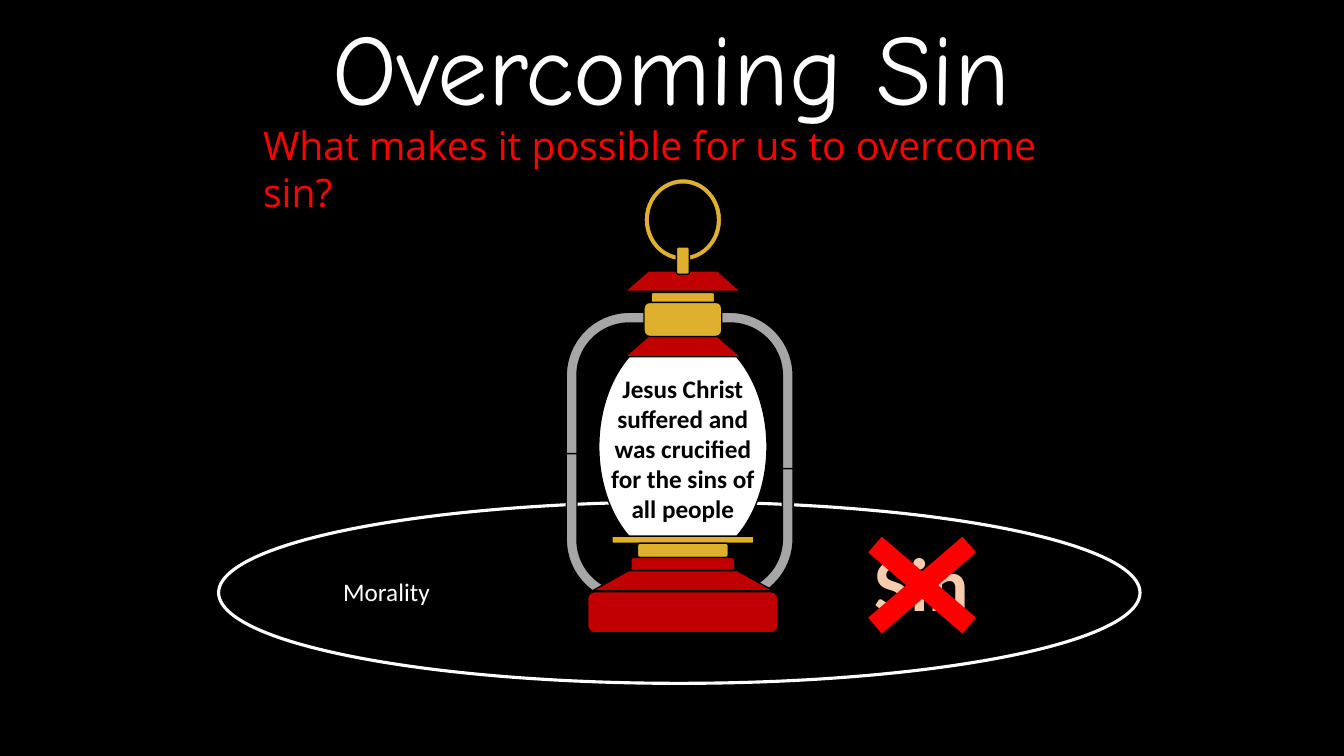
from dataclasses import dataclass

from lxml import etree
from pptx import Presentation
from pptx.dml.color import RGBColor
from pptx.enum.shapes import MSO_SHAPE
from pptx.enum.text import MSO_ANCHOR, MSO_AUTO_SIZE, PP_ALIGN
from pptx.oxml.ns import qn
from pptx.util import Cm, Pt

ARM, ELLIPSE, RING = MSO_SHAPE.BENT_ARROW, MSO_SHAPE.OVAL, MSO_SHAPE.DONUT
ROUNDED, TRAPEZOID = MSO_SHAPE.ROUNDED_RECTANGLE, MSO_SHAPE.FLOWCHART_MANUAL_OPERATION
CROSS = MSO_SHAPE.MATH_MULTIPLY
LEFT, CENTER = PP_ALIGN.LEFT, PP_ALIGN.CENTER


@dataclass(frozen=True)
class Theme:
    black: str = "000000"
    white: str = "FFFFFF"
    red: str = "FF0000"
    dark_red: str = "C00000"
    gold: str = "DEB02E"
    steel: str = "A6A6A6"
    peach: str = "F8CBAD"
    orange: str = "ED7D31"
    title_font: str = "Comic Neue"
    question_font: str = "Open Sans"
    body_font: str = "Calibri"
    title_size: int = 72
    sin_size: int = 54
    question_size: int = 28
    body_size: int = 18


THEME = Theme()

# Content; boxes are left, top, width, height in centimetres
TITLE = "Overcoming Sin"
QUESTION = "What makes it possible for us to overcome sin?"
MORALITY = "Morality"
SIN = "Sin"
GLOBE_TEXT = "Jesus Christ suffered and was crucified for the sins of all people"

TITLE_BOX = (5.28, 0, 23.29, 3.33)
QUESTION_BOX = (6.38, 2.92, 21.51, 1.45)
MORALITY_BOX = (8.1, 14.4, 3.28, 1.02)
SIN_BOX = (21.77, 13.39, 2.92, 2.57)
GROUND_BOX = (5.51, 12.65, 23.22, 4.57)
CROSS_BOX = (20.98, 12.8, 4.52, 3.89)

LANTERN_AXIS = 17.21
GLOBE_TEXT_WIDTH, GLOBE_TEXT_TOP, GLOBE_TEXT_HEIGHT = 4.14, 9.27, 4.11

# Lantern arms: left, top, height, flips
ARM_WIDTH = 2.77
ARM_ADJUSTMENTS = (0.098, 0.139, 0.119, 0.576)
ARMS = [
    (17.22, 11.23, 4.19, ("flipH", "flipV")),
    (17.22, 7.62, 4.19, ("flipH",)),
    (14.27, 10.92, 4.52, ("flipV",)),
    (14.27, 7.62, 3.81, ()),
]

# Lantern body, centred on its axis: kind, width, top, height, colour, rotation
BODY = [
    (ELLIPSE, 4.24, 8.31, 5.89, THEME.white, 0),
    (TRAPEZOID, 2.92, 8.48, 0.51, THEME.dark_red, 180),
    (TRAPEZOID, 2.92, 6.83, 0.51, THEME.dark_red, 180),
    (ROUNDED, 1.6, 7.37, 0.28, THEME.gold, 0),
    (ROUNDED, 1.96, 7.62, 0.86, THEME.gold, 0),
    (RING, 1.96, 4.5, 2.08, THEME.gold, 0),
    (ROUNDED, 0.69, 6.4, 0.33, THEME.gold, 270),
    (ROUNDED, 3.58, 13.51, 0.18, THEME.gold, 0),
    (ROUNDED, 4.8, 14.91, 1.04, THEME.dark_red, 0),
    (ROUNDED, 2.29, 13.69, 0.36, THEME.gold, 0),
    (ROUNDED, 2.62, 14.05, 0.36, THEME.dark_red, 0),
    (TRAPEZOID, 4.57, 14.38, 0.51, THEME.dark_red, 180),
]
RING_THICKNESS = 0.073


def lengths(box):
    return [Cm(value) for value in box]


def centred(width, top, height):
    return (LANTERN_AXIS - width / 2, top, width, height)


def add_shape(shapes, kind, box, fill, line=THEME.black, weight=1, adjustments=()):
    shape = shapes.add_shape(kind, *lengths(box))
    shape.shadow.inherit = False
    if fill:
        shape.fill.solid()
        shape.fill.fore_color.rgb = RGBColor.from_string(fill)
    else:
        shape.fill.background()
    shape.line.color.rgb = RGBColor.from_string(line)
    shape.line.width = Pt(weight)
    for index, value in enumerate(adjustments):
        shape.adjustments[index] = value
    return shape


def write_text(shape, text, font, size, color, align=CENTER, bold=False, wrap=True):
    frame = shape.text_frame
    frame.text = text
    frame.word_wrap = wrap
    frame.auto_size = MSO_AUTO_SIZE.NONE
    frame.vertical_anchor = MSO_ANCHOR.TOP
    paragraph = frame.paragraphs[0]
    paragraph.alignment = align
    paragraph.font.name = font
    paragraph.font.size = Pt(size)
    paragraph.font.bold = bold
    paragraph.font.color.rgb = RGBColor.from_string(color)
    return paragraph


def outline_text(paragraph, color, weight):
    properties = paragraph.runs[0].font._element
    line = etree.Element(qn("a:ln"), w=str(Pt(weight)))
    fill = etree.SubElement(line, qn("a:solidFill"))
    etree.SubElement(fill, qn("a:srgbClr"), val=color)
    properties.insert(0, line)


def add_lantern(shapes):
    lantern = shapes.add_group_shape().shapes
    for left, top, height, flips in ARMS:
        box = (left, top, ARM_WIDTH, height)
        arm = add_shape(lantern, ARM, box, THEME.steel, adjustments=ARM_ADJUSTMENTS)
        for flip in flips:
            arm._element.spPr.get_or_add_xfrm().set(flip, "1")
    for kind, width, top, height, color, rotation in BODY:
        adjustments = (RING_THICKNESS,) if kind == RING else ()
        part = add_shape(lantern, kind, centred(width, top, height), color,
                         adjustments=adjustments)
        part.rotation = rotation
    box = centred(GLOBE_TEXT_WIDTH, GLOBE_TEXT_TOP, GLOBE_TEXT_HEIGHT)
    write_text(lantern.add_textbox(*lengths(box)), GLOBE_TEXT, THEME.body_font,
               THEME.body_size, THEME.black, bold=True)


def main():
    presentation = Presentation()
    presentation.slide_width, presentation.slide_height = Cm(33.87), Cm(19.05)
    slide = presentation.slides.add_slide(presentation.slide_layouts[5])
    shapes = slide.shapes

    # Background and title
    slide.background.fill.solid()
    slide.background.fill.fore_color.rgb = RGBColor.from_string(THEME.black)
    title = shapes.title
    title.left, title.top, title.width, title.height = lengths(TITLE_BOX)
    write_text(title, TITLE, THEME.title_font, THEME.title_size, THEME.white)

    # Ground with its two words
    add_shape(shapes, ELLIPSE, GROUND_BOX, None, THEME.white, 2.25)
    write_text(shapes.add_textbox(*lengths(MORALITY_BOX)), MORALITY,
               THEME.body_font, THEME.body_size, THEME.white)
    sin = write_text(shapes.add_textbox(*lengths(SIN_BOX)), SIN, THEME.body_font,
                     THEME.sin_size, THEME.peach, bold=True, wrap=False)
    outline_text(sin, THEME.orange, 1.75)

    # Lantern, question and cross
    add_lantern(shapes)
    write_text(shapes.add_textbox(*lengths(QUESTION_BOX)), QUESTION,
               THEME.question_font, THEME.question_size, THEME.red, LEFT)
    add_shape(shapes, CROSS, CROSS_BOX, THEME.red, THEME.red, adjustments=(0.126,))

    presentation.save("out.pptx")


if __name__ == "__main__":
    main()
